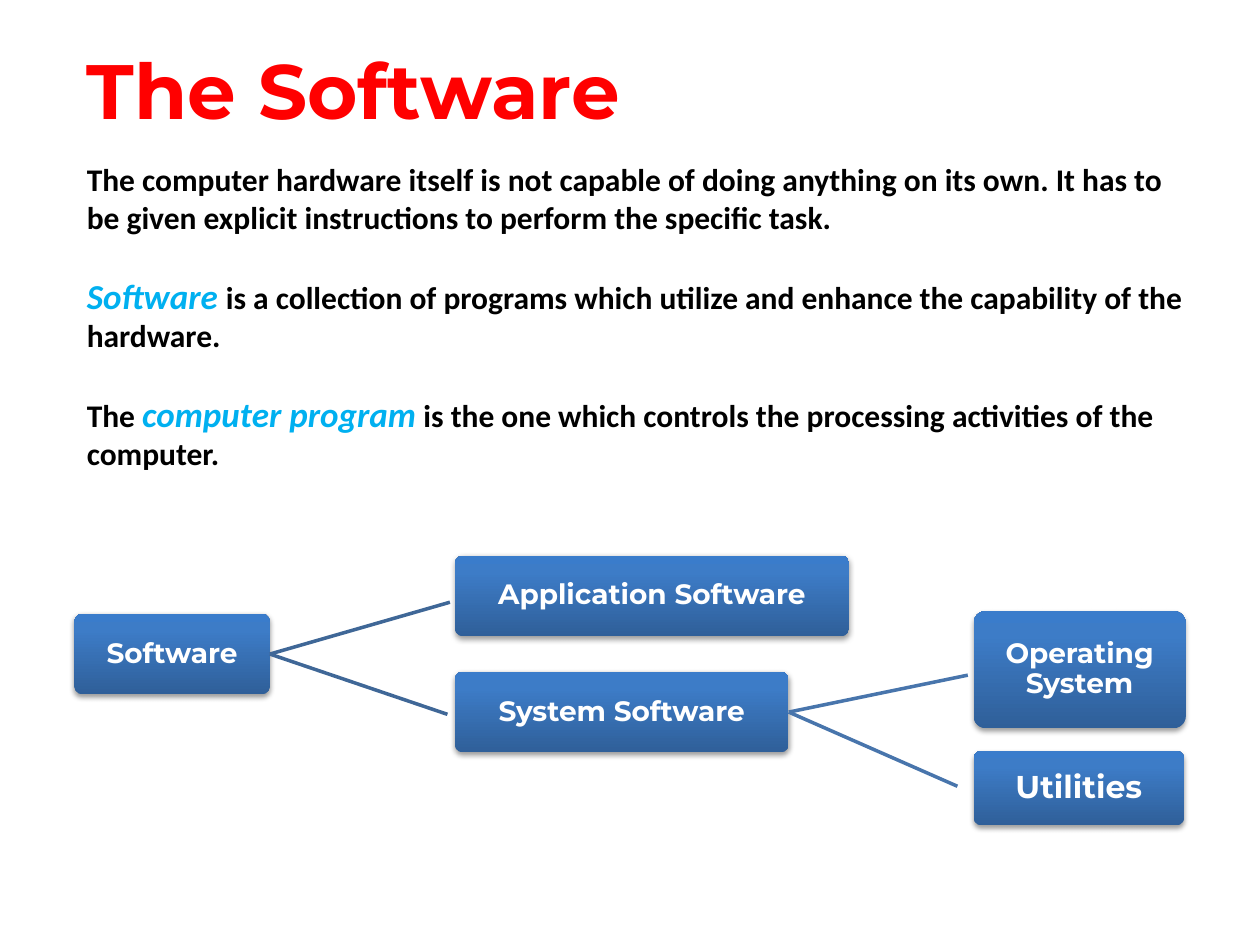
import copy

import pptx
import pptx.dml.color
import pptx.enum.shapes
import pptx.enum.text
import pptx.oxml.ns
import pptx.util
from lxml import etree

Cm = pptx.util.Cm
Pt = pptx.util.Pt
RGB = pptx.dml.color.RGBColor
ALIGN = pptx.enum.text.PP_ALIGN
ANCHOR = pptx.enum.text.MSO_ANCHOR
qn = pptx.oxml.ns.qn

RED = RGB(0xFF, 0x00, 0x00)
BLACK = RGB(0x00, 0x00, 0x00)
WHITE = RGB(0xFF, 0xFF, 0xFF)
CYAN = RGB(0x00, 0xB0, 0xF0)
STEEL = RGB(0x3F, 0x67, 0x97)
SLATE = RGB(0x48, 0x75, 0xAC)
SHADES = [
    (0, RGB(0x2F, 0x5F, 0x99)),
    (0.8, RGB(0x3D, 0x7C, 0xC7)),
    (1, RGB(0x3A, 0x7C, 0xCB)),
]
HEAD = "Montserrat"
BODY = "Calibri"

INTRO = [
    [("The computer hardware itself is not capable of doing anything on its own. "
      "It has to be given explicit instructions to perform the specific task.", False)],
    [("Software ", True),
     ("is a collection of programs which utilize and enhance the capability "
      "of the hardware.", False)],
    [("The ", False), ("computer program", True),
     (" is the one which controls the processing activities of the computer.", False)],
]


def add_run(para, text, font=HEAD, size=16, color=WHITE, italic=False):
    run = para.add_run()
    run.text = text
    style = run.font
    style.name = font
    style.size = Pt(size)
    style.bold = True
    style.italic = italic
    style.color.rgb = color


def add_frame(slide, left, top, width, height, wrap=True):
    box = slide.shapes.add_textbox(Cm(left), Cm(top), Cm(width), Cm(height))
    box.text_frame.word_wrap = wrap
    return box.text_frame


def add_title(slide):
    frame = add_frame(slide, 1.5, 0.74, 12.07, 2.13, wrap=False)
    para = frame.paragraphs[0]
    para.alignment = ALIGN.LEFT
    add_run(para, "The Software", size=44, color=RED)


def add_intro(slide):
    frame = add_frame(slide, 1.5, 3.1, 22.81, 7.34)
    for i, parts in enumerate(INTRO):
        para = frame.add_paragraph() if i else frame.paragraphs[0]
        if i:
            para.space_before = Pt(22)
        for text, term in parts:
            add_run(para, text, font=BODY, size=20 if term else 18,
                    color=CYAN if term else BLACK, italic=term)


def shade(shape):
    """Give the shape its three-stop gradient, dark at the bottom."""
    fill = shape.fill
    fill.gradient()
    fill.gradient_angle = 90
    stops = shape._element.spPr.find(qn("a:gradFill")).find(qn("a:gsLst"))
    stops.append(copy.deepcopy(stops[-1]))
    for stop, (place, color) in zip(fill.gradient_stops, SHADES):
        stop.position = place
        stop.color.rgb = color


def drop_shadow(shape):
    shape.shadow.inherit = False
    effects = shape._element.spPr.find(qn("a:effectLst"))
    outer = etree.SubElement(effects, qn("a:outerShdw"), blurRad=str(Pt(3.1)),
                             dist=str(Pt(1.6)), dir="5400000", rotWithShape="0")
    color = etree.SubElement(outer, qn("a:srgbClr"), val=str(BLACK))
    etree.SubElement(color, qn("a:alpha"), val="38000")


def add_node(slide, text, left, top, width, height=1.63, size=16):
    node = slide.shapes.add_shape(
        pptx.enum.shapes.MSO_SHAPE.ROUNDED_RECTANGLE,
        Cm(left), Cm(top), Cm(width), Cm(height))
    node.adjustments[0] = 0.1
    shade(node)
    node.line.fill.background()
    drop_shadow(node)
    frame = node.text_frame
    frame.word_wrap = True
    frame.vertical_anchor = ANCHOR.MIDDLE
    frame.margin_left = frame.margin_right = Cm(0.05)
    frame.margin_top = frame.margin_bottom = Cm(0.05)
    para = frame.paragraphs[0]
    para.alignment = ALIGN.CENTER
    para.line_spacing = 0.9
    add_run(para, text, size=size)
    return node


def add_branch(slide, node, x, y, color):
    """Draw a line from the right side of a node to a point."""
    line = slide.shapes.add_connector(
        pptx.enum.shapes.MSO_CONNECTOR.STRAIGHT,
        node.left + node.width, node.top + node.height // 2, Cm(x), Cm(y))
    line.begin_connect(node, 3)
    line.line.color.rgb = color
    line.line.width = Pt(2)
    etree.SubElement(line._element.spPr, qn("a:effectLst"))


def add_tree(slide):
    root = add_node(slide, "Software", 1.5, 12.37, 3.94)
    add_node(slide, "Application Software", 9.17, 11.2, 7.95)
    system = add_node(slide, "System Software", 9.17, 13.54, 6.73)
    add_node(slide, "Operating System", 19.63, 12.32, 4.27, height=2.36)
    add_node(slide, "Utilities", 19.63, 15.14, 4.24, height=1.5, size=18)
    add_branch(slide, root, 9.07, 12.14, STEEL)
    add_branch(slide, root, 9.02, 14.4, STEEL)
    add_branch(slide, system, 19.51, 13.61, SLATE)
    add_branch(slide, system, 19.3, 15.85, SLATE)


def main():
    deck = pptx.Presentation()
    deck.slide_width = Cm(25.4)
    deck.slide_height = Cm(19.05)
    slide = deck.slides.add_slide(deck.slide_layouts[6])
    add_intro(slide)
    add_title(slide)
    add_tree(slide)
    deck.save("out.pptx")


if __name__ == "__main__":
    main()
